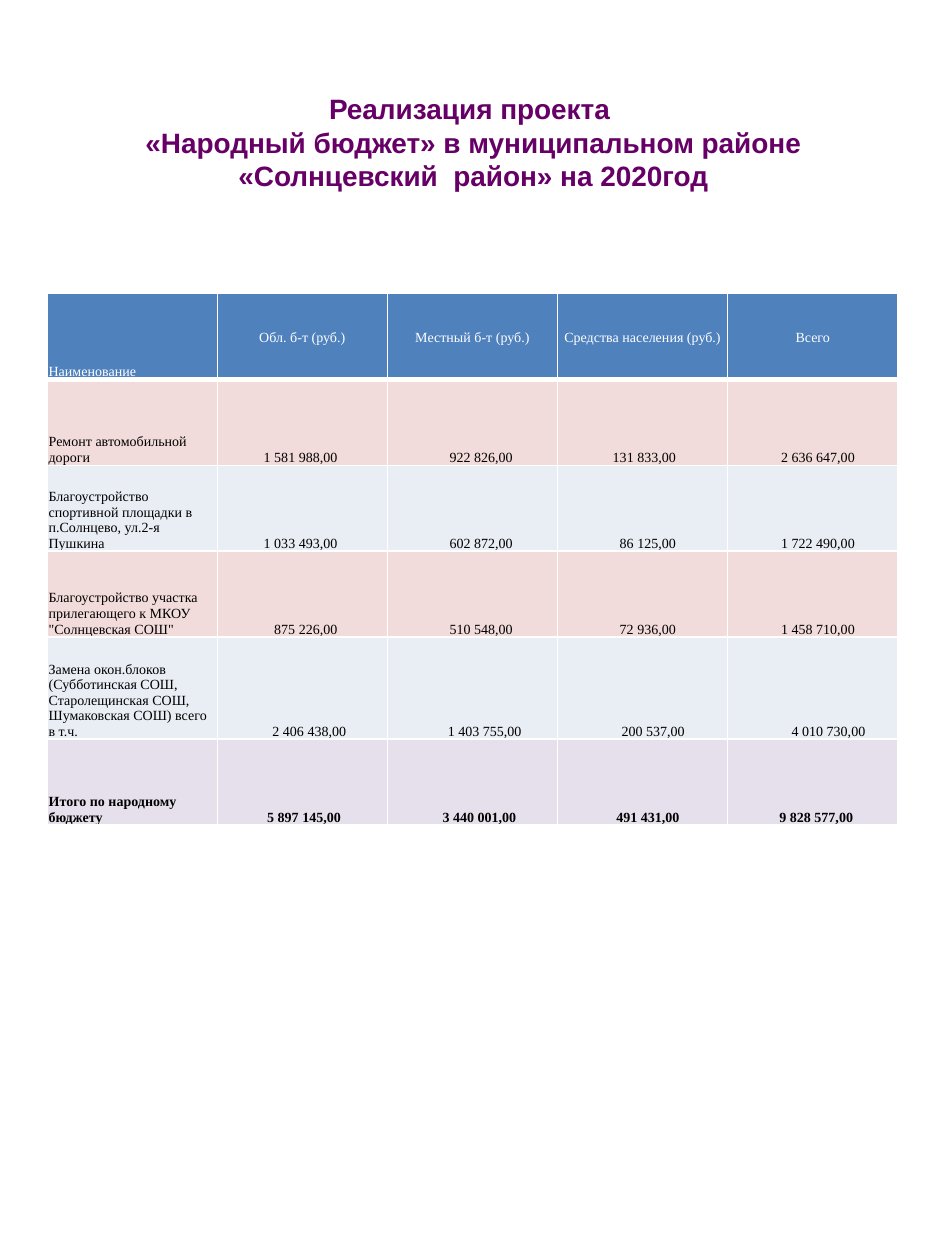
from lxml.etree import SubElement
from pptx import Presentation
from pptx.dml.color import RGBColor
from pptx.enum.text import MSO_ANCHOR, MSO_AUTO_SIZE, PP_ALIGN
from pptx.oxml.ns import qn
from pptx.util import Cm, Pt

HEADINGS = ["Наименование", "Обл. б-т (руб.)", "Местный б-т (руб.)",
            "Средства населения (руб.)", "Всего"]
PROJECTS = [
    ["Ремонт автомобильной дороги",
     "1 581 988,00", "922 826,00", "131 833,00", "2 636 647,00"],
    ["Благоустройство спортивной площадки в п.Солнцево, ул.2-я Пушкина",
     "1 033 493,00", "602 872,00", "86 125,00", "1 722 490,00"],
    ["Благоустройство участка прилегающего к МКОУ \"Солнцевская СОШ\"",
     "875 226,00", "510 548,00", "72 936,00", "1 458 710,00"],
    ["Замена окон.блоков (Субботинская СОШ, Старолещинская СОШ, "
     "Шумаковская СОШ) всего в т.ч.",
     "2 406 438,00", "1 403 755,00", "200 537,00", "4 010 730,00"],
    ["Итого по народному бюджету",
     "5 897 145,00", "3 440 001,00", "491 431,00", "9 828 577,00"],
]
INDENTS = [[-1, 5, 1, 3], [-1, 5, 3, 3], [2, 5, 3, 3], [4, 7, 6, 9], [1, 4, 3, 2]]
ROW_FILLS = ["F2DCDB", "E9EDF4", "F2DCDB", "E9EDF4", "E6E0EC"]
ROW_HEIGHTS = [1.73, 1.73, 1.73, 1.73, 2.06, 1.73]


def colour(value):
    return RGBColor.from_string(value)


def write(frame, text, font="Times New Roman", size=8, color="000000",
          bold=False, align=PP_ALIGN.LEFT):
    paragraph = frame.paragraphs[0]
    paragraph.text = text
    paragraph.alignment = align
    for run in paragraph.runs:
        run.font.name = font
        run.font.size = Pt(size)
        run.font.bold = bold
        run.font.color.rgb = colour(color)


def draw_borders(cell, top=1, bottom=1):
    properties = cell._tc.get_or_add_tcPr()
    widths = {"a:lnL": 1, "a:lnR": 1, "a:lnT": top, "a:lnB": bottom}
    for position, (side, width) in enumerate(widths.items()):
        line = SubElement(properties, qn(side), w=str(Pt(width)))
        fill = SubElement(line, qn("a:solidFill"))
        SubElement(fill, qn("a:srgbClr"), val="FFFFFF")
        properties.insert(position, line)


def format_cell(cell, fill, anchor=MSO_ANCHOR.BOTTOM, indent=0, **borders):
    cell.fill.solid()
    cell.fill.fore_color.rgb = colour(fill)
    cell.vertical_anchor = anchor
    cell.margin_left = Cm(0.03) + Pt(2 * max(indent, 0))
    cell.margin_right = Cm(0.03) + Pt(2 * max(-indent, 0))
    cell.margin_top = Cm(0.03)
    cell.margin_bottom = 0
    draw_borders(cell, **borders)


def place_title(slide, left, top, width, height):
    title = slide.shapes.title
    title.left, title.top = Cm(left), Cm(top)
    title.width, title.height = Cm(width), Cm(height)
    frame = title.text_frame
    frame.word_wrap = True
    frame.auto_size = MSO_AUTO_SIZE.NONE
    frame.vertical_anchor = MSO_ANCHOR.MIDDLE
    write(frame, "Реализация проекта \v«Народный бюджет» в муниципальном районе "
          "«Солнцевский  район» на 2020год",
          font="Arial", size=16, color="660066", bold=True, align=PP_ALIGN.CENTER)


def place_budget(slide, left, top, width):
    budget = slide.shapes.add_table(
        len(ROW_HEIGHTS), len(HEADINGS), Cm(left), Cm(top),
        Cm(width), Cm(sum(ROW_HEIGHTS))).table
    for column in budget.columns:
        column.width = Cm(width / len(HEADINGS))
    for row, height in zip(budget.rows, ROW_HEIGHTS):
        row.height = Cm(height)

    for column, heading in enumerate(HEADINGS):
        cell = budget.cell(0, column)
        anchor = MSO_ANCHOR.MIDDLE if column else MSO_ANCHOR.BOTTOM
        align = PP_ALIGN.CENTER if column else PP_ALIGN.LEFT
        format_cell(cell, "4F81BD", anchor=anchor, bottom=3)
        write(cell.text_frame, heading, color="FFFFFF", align=align)

    for number, (project, indents, fill) in enumerate(
            zip(PROJECTS, INDENTS, ROW_FILLS), start=1):
        for column, (text, indent) in enumerate(zip(project, [0] + indents)):
            cell = budget.cell(number, column)
            format_cell(cell, fill, indent=indent, top=3 if number == 1 else 1)
            write(cell.text_frame, text, bold=number == len(PROJECTS),
                  align=PP_ALIGN.CENTER if column else PP_ALIGN.LEFT)


def main():
    presentation = Presentation()
    presentation.slide_width, presentation.slide_height = Cm(19.05), Cm(25.4)
    slide = presentation.slides.add_slide(presentation.slide_layouts[5])
    place_title(slide, 0.97, 1.02, 17.15, 3.68)
    place_budget(slide, 0.95, 5.92, 17.15)
    presentation.save("out.pptx")


if __name__ == "__main__":
    main()
